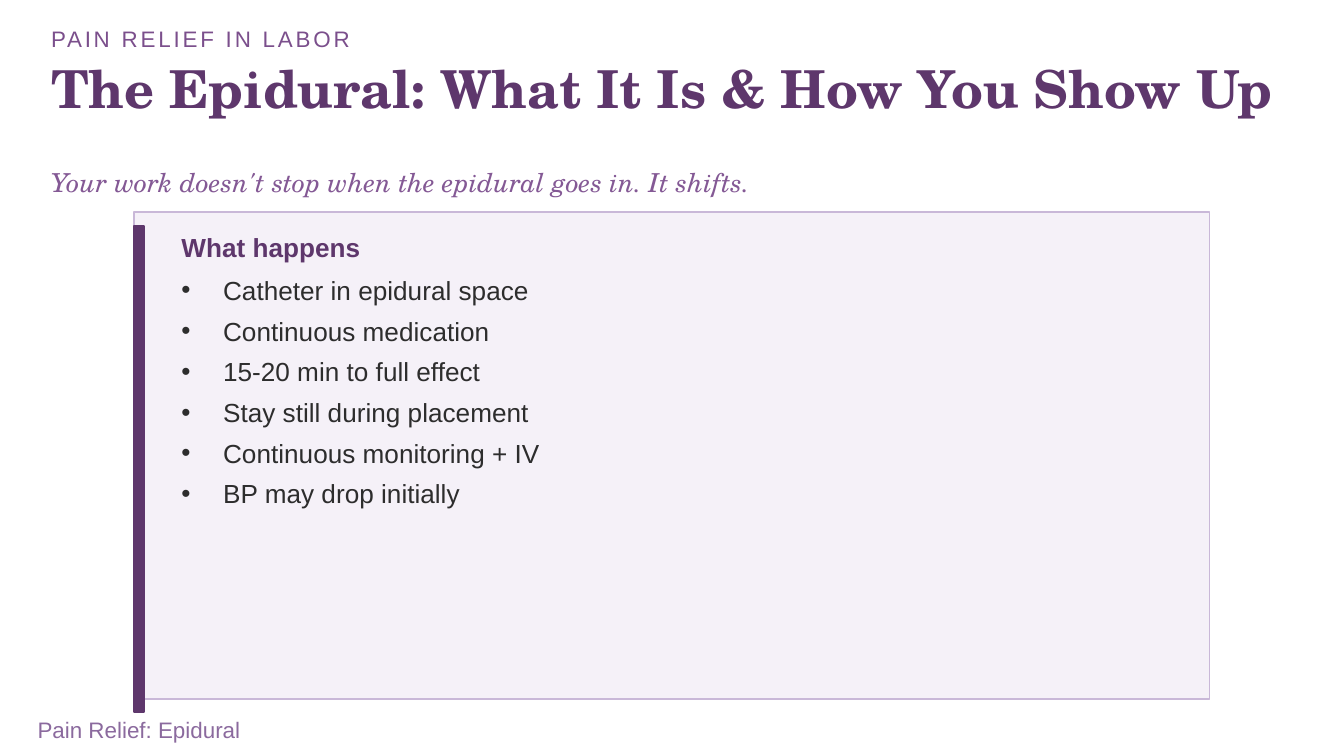
from dataclasses import dataclass

from lxml.etree import SubElement
from pptx import Presentation
from pptx.dml.color import RGBColor
from pptx.enum.shapes import MSO_SHAPE
from pptx.enum.text import MSO_ANCHOR, MSO_AUTO_SIZE, PP_ALIGN
from pptx.oxml.ns import qn
from pptx.util import Inches, Pt

SANS, SERIF = "Arial", "TeX Gyre Schola"
PURPLE, INK = "5E376C", "2D2D2D"
MARGIN, WIDTH = 0.38, 9.3
INDENT = 0.31
HAPPENINGS = [
    "Catheter in epidural space",
    "Continuous medication",
    "15-20 min to full effect",
    "Stay still during placement",
    "Continuous monitoring + IV",
    "BP may drop initially",
]


@dataclass
class Box:
    left: float
    top: float
    width: float
    height: float

    def lengths(self):
        return [Inches(v) for v in (self.left, self.top, self.width, self.height)]


@dataclass
class Style:
    size: float
    color: str
    font: str = SANS
    bold: bool = False
    italic: bool = False
    spacing: float = 0


@dataclass
class Label:
    text: str
    box: Box
    style: Style
    anchor: MSO_ANCHOR = MSO_ANCHOR.MIDDLE


LABELS = [
    Label("PAIN RELIEF IN LABOR", Box(MARGIN, 0.18, WIDTH, 0.22),
          Style(12, "7B4F8C", spacing=1.5)),
    Label("Your work doesn't stop when the epidural goes in. It shifts.",
          Box(MARGIN, 1.24, WIDTH, 0.38),
          Style(14, "845995", SERIF, italic=True), MSO_ANCHOR.TOP),
    Label("What happens", Box(1.35, 1.7, 7.27, 0.28), Style(14, PURPLE, bold=True)),
    Label("Pain Relief: Epidural", Box(0.28, 5.32, 4.5, 0.22), Style(12, "8B6A9E")),
]


def rgb(color: str) -> RGBColor:
    return RGBColor.from_string(color)


def fill_text(shape, text: str, style: Style, anchor: MSO_ANCHOR):
    """Write text without insets and format every run."""
    tf = shape.text_frame
    tf.text = text
    tf.word_wrap = True
    tf.auto_size = MSO_AUTO_SIZE.NONE
    tf.vertical_anchor = anchor
    tf.margin_left = tf.margin_top = tf.margin_right = tf.margin_bottom = 0
    for p in tf.paragraphs:
        p.alignment = PP_ALIGN.LEFT
        for r in p.runs:
            r.font.name, r.font.size = style.font, Pt(style.size)
            r.font.bold, r.font.italic = style.bold, style.italic
            r.font.color.rgb = rgb(style.color)
            if style.spacing:
                r.font._element.set("spc", str(round(style.spacing * 100)))


def place(shape, box: Box):
    shape.left, shape.top, shape.width, shape.height = box.lengths()


def add_label(s, label: Label):
    fill_text(s.shapes.add_textbox(*label.box.lengths()),
              label.text, label.style, label.anchor)


def add_rect(s, box: Box, fill: str, line: str):
    rect = s.shapes.add_shape(MSO_SHAPE.RECTANGLE, *box.lengths())
    rect.shadow.inherit = False
    rect.fill.solid()
    rect.fill.fore_color.rgb = rgb(fill)
    rect.line.color.rgb = rgb(line)
    rect.line.width = Pt(1)
    return rect


def add_bullet(p, color: str):
    pPr = p._p.get_or_add_pPr()
    pPr.set("marL", str(Inches(INDENT)))
    pPr.set("indent", str(-Inches(INDENT)))
    SubElement(SubElement(pPr, qn("a:buClr")), qn("a:srgbClr"), val=color)
    SubElement(pPr, qn("a:buChar"), char="•")
    p.space_before, p.space_after = Pt(0), Pt(5)


def main():
    prs = Presentation()
    prs.slide_width = Inches(10)
    prs.slide_height = prs.slide_width * 9 // 16
    s = prs.slides.add_slide(prs.slide_layouts[1])
    title, body = s.shapes.title, s.placeholders[1]

    place(title, Box(MARGIN, 0.42, WIDTH, 0.78))
    fill_text(title, "The Epidural: What It Is & How You Show Up",
              Style(28, PURPLE, SERIF, bold=True), MSO_ANCHOR.TOP)

    add_rect(s, Box(1, 1.58, 8, 3.62), "F5F1F8", "C9B8D8")
    accent = add_rect(s, Box(1, 1.68, 0.07, 3.62), PURPLE, PURPLE)

    place(body, Box(1.35, 2.04, 7.31, 3))
    fill_text(body, "\n".join(HAPPENINGS), Style(14, INK), MSO_ANCHOR.TOP)
    for p in body.text_frame.paragraphs:
        add_bullet(p, INK)
    accent.element.addnext(body.element)  # the list lies in front of the panel

    for label in LABELS:
        add_label(s, label)
    prs.save("out.pptx")


if __name__ == "__main__":
    main()
